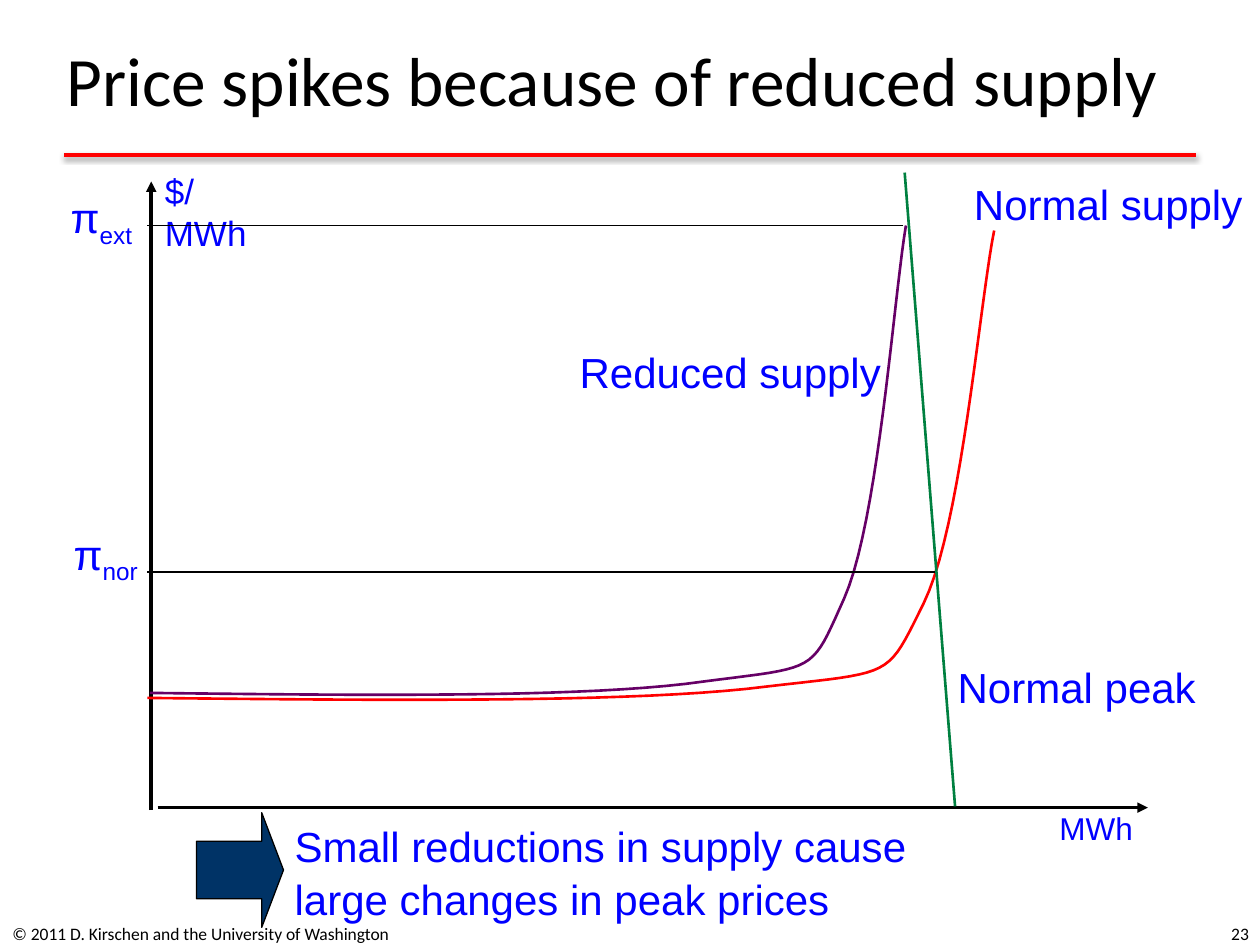
from lxml.etree import SubElement
from pptx import Presentation
from pptx.dml.color import RGBColor
from pptx.enum.shapes import MSO_CONNECTOR as CONNECTOR, MSO_SHAPE as SHAPE
from pptx.enum.text import MSO_ANCHOR as ANCHOR, PP_ALIGN as ALIGN
from pptx.oxml.ns import qn
from pptx.util import Inches, Pt

BLACK = RGBColor(0x00, 0x00, 0x00)
RED = RGBColor(0xFF, 0x00, 0x00)
BLUE = RGBColor(0x00, 0x00, 0xFF)
GREEN = RGBColor(0x00, 0x80, 0x40)
PURPLE = RGBColor(0x66, 0x00, 0x66)
NAVY = RGBColor(0x00, 0x33, 0x66)

TITLE = {"name": "Calibri", "size": Pt(39.6)}
FOOTER = {"name": "Calibri", "size": Pt(10)}
LABEL = {"name": "Arial", "size": Pt(24)}
PRICE_UNIT = {"name": "Arial", "size": Pt(20)}
ENERGY_UNIT = {"name": "Arial", "size": Pt(18)}

CURVE_STEPS = 20
AXIS_X = 1.17  # where price levels and normal supply start


def add_text(slide, box, lines, font, color, align=ALIGN.LEFT,
             anchor=ANCHOR.MIDDLE, wrap=False, gap=0):
    """Each line is a string, or a (base, subscript) pair."""
    frame = slide.shapes.add_textbox(*map(Inches, box)).text_frame
    frame.word_wrap = wrap
    frame.vertical_anchor = anchor
    for i, line in enumerate(lines):
        paragraph = frame.add_paragraph() if i else frame.paragraphs[0]
        paragraph.alignment = align
        paragraph.space_before = Pt(gap)
        parts = (line,) if isinstance(line, str) else line
        for level, text in enumerate(parts):
            run = paragraph.add_run()
            run.text = text
            for key, value in font.items():
                setattr(run.font, key, value)
            run.font.color.rgb = color
            if level:
                run.font._element.set("baseline", "-25000")


def add_line(slide, start, end, color, width, arrow=False, shadow=False):
    line = slide.shapes.add_connector(CONNECTOR.STRAIGHT, *map(Inches, start + end))
    line.line.color.rgb = color
    line.line.width = Pt(width)
    if arrow:
        SubElement(line.line._get_or_add_ln(), qn("a:tailEnd"), type="triangle")
    effects = SubElement(line._element.spPr, qn("a:effectLst"))
    if shadow:
        outer = SubElement(effects, qn("a:outerShdw"), blurRad="40000",
                           dist="20000", dir="5400000", rotWithShape="0")
        tint = SubElement(outer, qn("a:srgbClr"), val="000000")
        SubElement(tint, qn("a:alpha"), val="38000")


def bezier_points(start, segments):
    """Points along joined cubic curves, after the start point."""
    points = []
    for c1, c2, end in segments:
        for step in range(1, CURVE_STEPS + 1):
            t = step / CURVE_STEPS
            u = 1 - t
            points.append(tuple(
                Inches(u**3 * a + 3 * u * u * t * b + 3 * u * t * t * c + t**3 * d)
                for a, b, c, d in zip(start, c1, c2, end)))
        start = end
    return points


def add_supply_curve(slide, start, segments, color):
    builder = slide.shapes.build_freeform(*map(Inches, start))
    builder.add_line_segments(bezier_points(start, segments), close=False)
    curve = builder.convert_to_shape()
    curve.shadow.inherit = False
    curve.fill.background()
    curve.line.color.rgb = color
    curve.line.width = Pt(1.5)


def add_block_arrow(slide, box):
    arrow = slide.shapes.add_shape(SHAPE.RIGHT_ARROW, *map(Inches, box))
    arrow.shadow.inherit = False
    arrow.adjustments[0] = 0.5
    arrow.adjustments[1] = 0.25
    arrow.fill.solid()
    arrow.fill.fore_color.rgb = NAVY
    arrow.line.color.rgb = BLACK
    arrow.line.width = Pt(0.75)


def main():
    deck = Presentation()
    deck.slide_width, deck.slide_height = Inches(10), Inches(7.5)
    slide = deck.slides.add_slide(deck.slide_layouts[6])

    # Title, rule and footer
    add_line(slide, (0.51, 1.23), (9.49, 1.23), RED, 2, shadow=True)
    add_text(slide, (0.43, 0.25, 9.35, 0.75),
             ["Price spikes because of reduced supply"], TITLE, BLACK, wrap=True)
    add_text(slide, (0, 7.21, 4.29, 0.4),
             ["© 2011 D. Kirschen and the University of Washington"],
             FOOTER, BLACK, wrap=True)
    add_text(slide, (7.68, 7.21, 2.33, 0.4), ["23"], FOOTER, BLACK,
             ALIGN.RIGHT, wrap=True)

    # Axes and their units
    add_line(slide, (1.25, 6.41), (9.11, 6.41), BLACK, 2, arrow=True)
    add_line(slide, (1.2, 6.43), (1.2, 1.44), BLACK, 2, arrow=True)
    add_text(slide, (1.21, 1.3, 1.06, 0.43), ["$/MWh"], PRICE_UNIT, BLUE,
             anchor=ANCHOR.TOP, wrap=True)
    add_text(slide, (8.31, 6.37, 0.78, 0.4), ["MWh"], ENERGY_UNIT, BLUE,
             anchor=ANCHOR.TOP)

    # Supply curves and demand line
    add_supply_curve(slide, (AXIS_X, 5.54), [
        ((3.11, 5.56), (5.06, 5.58), (6.08, 5.45)),
        ((7.11, 5.33), (7.03, 5.39), (7.33, 4.79)),
        ((7.63, 4.18), (7.77, 2.44), (7.89, 1.83))], RED)
    add_line(slide, (7.58, 6.4), (7.18, 1.37), GREEN, 1.5)
    add_supply_curve(slide, (1.19, 5.5), [
        ((2.93, 5.52), (4.67, 5.54), (5.58, 5.41)),
        ((6.5, 5.29), (6.43, 5.35), (6.7, 4.75)),
        ((6.97, 4.14), (7.09, 2.4), (7.19, 1.79))], PURPLE)

    # Price levels
    for right, level in ((7.42, 4.54), (7.17, 1.79)):
        add_line(slide, (right, level), (AXIS_X, level), BLACK, 0.75)

    # Labels of prices and curves
    for box, label in (
            ((0.44, 1.5, 0.73, 0.5), ("π", "ext")),
            ((0.46, 4.17, 0.76, 0.5), ("π", "nor")),
            ((7.5, 5.2, 2.09, 0.5), "Normal peak"),
            ((7.63, 1.37, 2.33, 0.5), "Normal supply"),
            ((4.5, 2.7, 2.59, 0.5), "Reduced supply")):
        add_text(slide, box, [label], LABEL, BLUE, ALIGN.CENTER)

    # Conclusion
    add_block_arrow(slide, (1.56, 6.45, 0.69, 0.91))
    add_text(slide, (2.24, 6.47, 5.15, 0.9),
             ["Small reductions in supply cause", "large changes in peak prices"],
             LABEL, BLUE, gap=1.5)

    deck.save("out.pptx")


if __name__ == "__main__":
    main()
